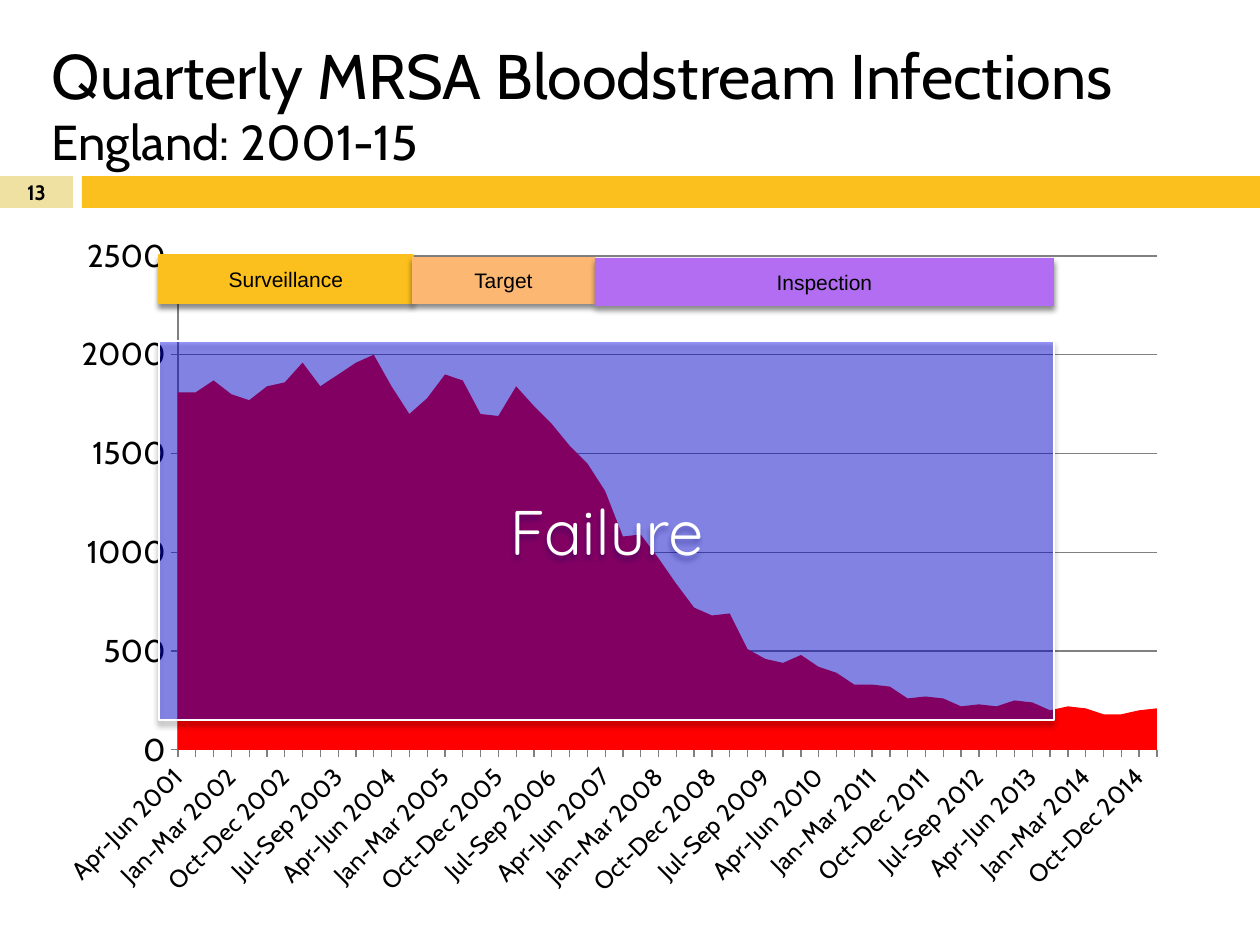
import dataclasses
import typing

import lxml.etree
import pptx
import pptx.chart.data
import pptx.dml.color
import pptx.enum.chart
import pptx.enum.shapes
import pptx.enum.text
import pptx.oxml
import pptx.oxml.ns
import pptx.util

EMU_PER_PX = 914400 / 126
COLORS = {
    "black": "000000",
    "white": "FFFFFF",
    "sand": "EFE1A2",
    "gold": "FBC01E",
    "peach": "FCB773",
    "violet": "B26DF3",
    "blue": "0000FF",
    "red": "FF0000",
    "grey": "808080",
}
QUARTERS = ["Jan-Mar", "Apr-Jun", "Jul-Sep", "Oct-Dec"]
CATEGORY_EXCEPTIONS = {47: "Jan-Mar 20123", 55: "Apr-Jun 2015"}
INFECTIONS = [
    1810, 1810, 1870, 1800, 1770, 1840, 1860, 1960, 1840, 1900, 1960, 2000, 1840, 1700,
    1780, 1900, 1870, 1700, 1690, 1840, 1740, 1650, 1540, 1450, 1310, 1080, 1090, 970,
    840, 720, 680, 690, 510, 460, 440, 480, 420, 390, 330, 330, 320, 260, 270, 260,
    220, 230, 220, 250, 240, 200, 220, 210, 180, 180, 200, 210,
]


@dataclasses.dataclass(frozen=True)
class Box:
    left: int
    top: int
    width: int
    height: int


@dataclasses.dataclass(frozen=True)
class Block:
    box: Box
    fill: str
    text: str = ""
    size: float = 12
    font: str = "Arial"
    color: str = "black"
    bold: bool = False
    line: typing.Optional[str] = None
    alpha: int = 100
    shadow: bool = True


CHART_BOX = Box(43, 224, 1137, 689)
PLOT_BOX = Box(178, 256, 979, 494)
TITLE_BOX = Box(43, 31, 1294, 119)
BLOCKS_BEHIND = [
    Block(Box(0, 176, 73, 32), "sand", "13", 11.9, "Cabin", bold=True, shadow=False),
    Block(Box(82, 176, 1178, 32), "gold", shadow=False),
]
BLOCKS_IN_FRONT = [
    Block(Box(159, 255, 254, 48), "gold", "Surveillance", line="gold"),
    Block(Box(412, 257, 183, 47), "peach", "Target"),
    Block(Box(595, 258, 459, 48), "violet", "Inspection"),
    Block(Box(159, 341, 895, 379), "blue", "Failure", 36, "Quicksand", "white",
          line="white", alpha=38),
]


def emu(px: int) -> int:
    return round(px * EMU_PER_PX)


def rgb(name: str) -> pptx.dml.color.RGBColor:
    return pptx.dml.color.RGBColor.from_string(COLORS[name])


def place(box: Box) -> tuple:
    return tuple(emu(px) for px in dataclasses.astuple(box))


def apply(target: typing.Any, **values: typing.Any) -> None:
    for name, value in values.items():
        setattr(target, name, value)


def format_font(font: typing.Any, name: str, size: float, color: str, bold: bool = False) -> None:
    apply(font, name=name, size=pptx.util.Pt(size), bold=bold)
    font.color.rgb = rgb(color)


def add_child(parent: typing.Any, tag: str, **attributes: str) -> typing.Any:
    return lxml.etree.SubElement(parent, pptx.oxml.ns.qn(tag), attributes)


def add_shadow(shape: typing.Any) -> None:
    effects = shape._element.spPr.find(pptx.oxml.ns.qn("a:effectLst"))
    shadow = add_child(effects, "a:outerShdw", blurRad="38100", dist="30480",
                       dir="5400000", rotWithShape="0")
    color = add_child(shadow, "a:srgbClr", val=COLORS["black"])
    add_child(color, "a:alpha", val="45000")


def add_block(slide: typing.Any, block: Block) -> None:
    shape = slide.shapes.add_shape(pptx.enum.shapes.MSO_SHAPE.RECTANGLE, *place(block.box))
    shape.shadow.inherit = False
    shape.fill.solid()
    shape.fill.fore_color.rgb = rgb(block.fill)
    if block.alpha < 100:
        color = shape._element.spPr.find(".//" + pptx.oxml.ns.qn("a:srgbClr"))
        add_child(color, "a:alpha", val=str(block.alpha * 1000))
    if block.line:
        shape.line.color.rgb = rgb(block.line)
        shape.line.width = pptx.util.Pt(0.79)
    else:
        shape.line.fill.background()
    if block.shadow:
        add_shadow(shape)
    if block.text:
        apply(shape.text_frame, word_wrap=True, margin_left=emu(9), margin_right=emu(9),
              margin_top=emu(5), margin_bottom=emu(5),
              vertical_anchor=pptx.enum.text.MSO_ANCHOR.MIDDLE)
        paragraph = shape.text_frame.paragraphs[0]
        paragraph.alignment = pptx.enum.text.PP_ALIGN.CENTER
        run = paragraph.add_run()
        run.text = block.text
        format_font(run.font, block.font, block.size, block.color, block.bold)


def add_title(slide: typing.Any) -> None:
    title = slide.shapes.title
    apply(title, **dict(zip(("left", "top", "width", "height"), place(TITLE_BOX))))
    apply(title.text_frame, word_wrap=True, auto_size=pptx.enum.text.MSO_AUTO_SIZE.NONE,
          vertical_anchor=pptx.enum.text.MSO_ANCHOR.TOP, margin_left=emu(9),
          margin_right=emu(9), margin_top=emu(5), margin_bottom=emu(5))
    paragraph = title.text_frame.paragraphs[0]
    paragraph.alignment = pptx.enum.text.PP_ALIGN.LEFT
    heading = paragraph.add_run()
    heading.text = "Quarterly MRSA Bloodstream Infections"
    format_font(heading.font, "Cabin", 36, "black")
    paragraph.add_line_break()
    subheading = paragraph.add_run()
    subheading.text = "England: 2001-15"
    format_font(subheading.font, "Cabin", 28, "black")


def quarter_label(index: int) -> str:
    years, quarter = divmod(index + 1, len(QUARTERS))
    return CATEGORY_EXCEPTIONS.get(index, f"{QUARTERS[quarter]} {2001 + years}")


def set_plot_layout(chart: typing.Any) -> None:
    plot_area = chart._chartSpace.chart.plotArea
    for layout in plot_area.findall(pptx.oxml.ns.qn("c:layout")):
        plot_area.remove(layout)
    layout = lxml.etree.Element(pptx.oxml.ns.qn("c:layout"))
    plot_area.insert(0, layout)
    manual = add_child(layout, "c:manualLayout")
    values = {
        "layoutTarget": "inner", "xMode": "edge", "yMode": "edge",
        "x": (PLOT_BOX.left - CHART_BOX.left) / CHART_BOX.width,
        "y": (PLOT_BOX.top - CHART_BOX.top) / CHART_BOX.height,
        "w": PLOT_BOX.width / CHART_BOX.width,
        "h": PLOT_BOX.height / CHART_BOX.height,
    }
    for name, value in values.items():
        add_child(manual, f"c:{name}", val=str(value))


def add_infection_chart(slide: typing.Any) -> None:
    data = pptx.chart.data.CategoryChartData()
    data.categories = [quarter_label(index) for index in range(len(INFECTIONS))]
    data.add_series("Series 1", INFECTIONS)
    chart = slide.shapes.add_chart(
        pptx.enum.chart.XL_CHART_TYPE.AREA, *place(CHART_BOX), data).chart
    apply(chart, has_legend=False, has_title=False)
    format_font(chart.font, "Cabin", 18, "black")
    fill = chart.plots[0].series[0].format.fill
    fill.solid()
    fill.fore_color.rgb = rgb("red")

    category_axis, value_axis = chart.category_axis, chart.value_axis
    apply(value_axis, minimum_scale=0, maximum_scale=2500, major_unit=500,
          has_major_gridlines=True)
    category_axis.has_major_gridlines = False
    for axis, size in ((category_axis, 14), (value_axis, 18)):
        axis.major_tick_mark = pptx.enum.chart.XL_TICK_MARK.OUTSIDE
        axis.minor_tick_mark = pptx.enum.chart.XL_TICK_MARK.NONE
        format_font(axis.tick_labels.font, "Cabin", size, "black")
    for line in (category_axis.format.line, value_axis.format.line,
                 value_axis.major_gridlines.format.line):
        line.color.rgb = rgb("grey")
        line.width = pptx.util.Pt(0.75)
    category_element = category_axis._element
    category_element.find(".//" + pptx.oxml.ns.qn("a:bodyPr")).set("rot", "-2700000")
    skip = lxml.etree.Element(pptx.oxml.ns.qn("c:tickLblSkip"), val="3")
    category_element.find(pptx.oxml.ns.qn("c:noMultiLvlLbl")).addprevious(skip)
    value_axis._element.find(pptx.oxml.ns.qn("c:crossBetween")).set("val", "midCat")
    set_plot_layout(chart)


def main() -> None:
    presentation = pptx.Presentation()
    apply(presentation, slide_width=emu(1260), slide_height=emu(945))
    slide = presentation.slides.add_slide(presentation.slide_layouts[5])
    add_title(slide)
    for block in BLOCKS_BEHIND:
        add_block(slide, block)
    add_infection_chart(slide)
    for block in BLOCKS_IN_FRONT:
        add_block(slide, block)
    presentation.save("out.pptx")


if __name__ == "__main__":
    main()
